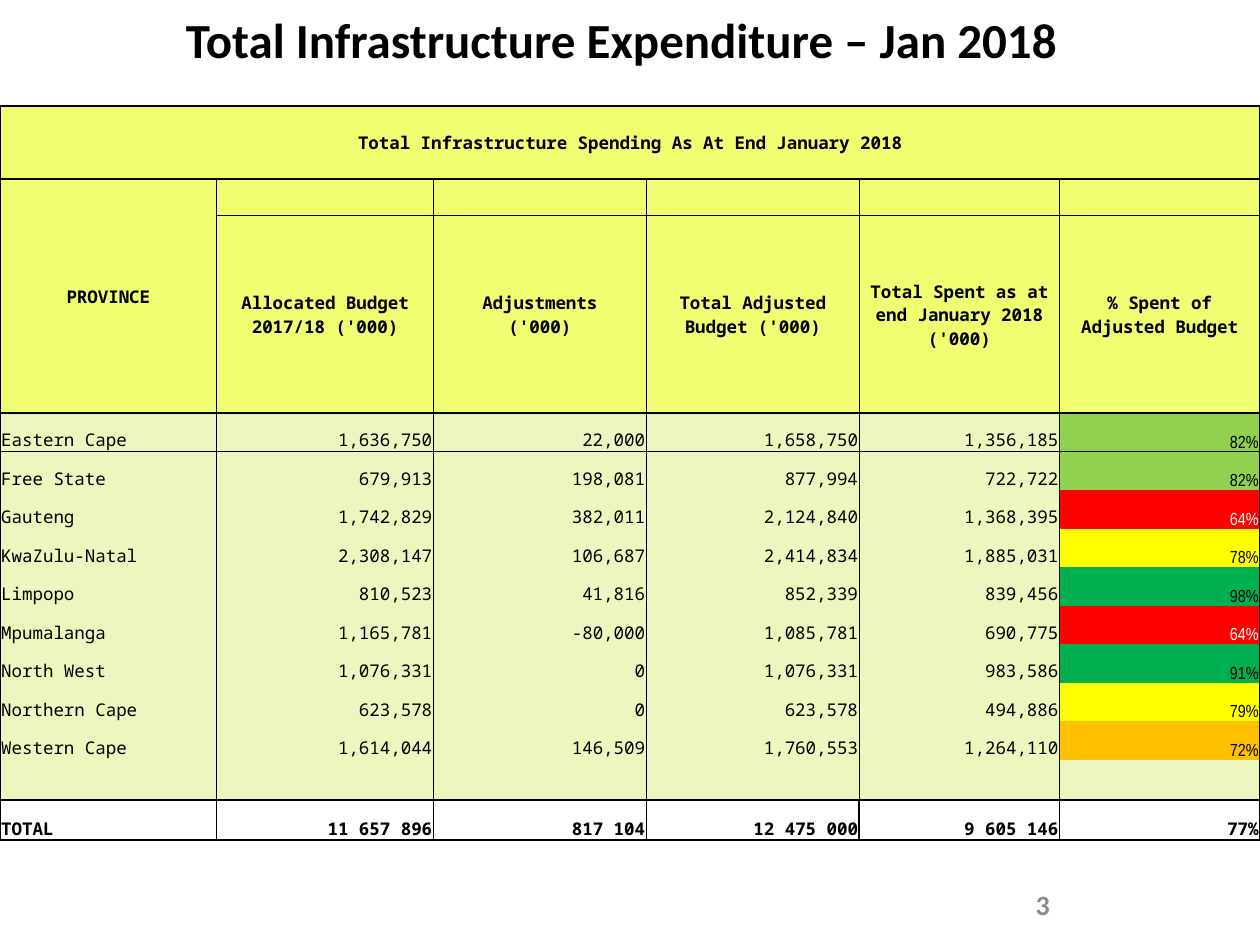
from lxml import etree
from pptx import Presentation
from pptx.dml.color import RGBColor
from pptx.enum.text import MSO_ANCHOR as Anchor, PP_ALIGN as Align
from pptx.oxml.ns import qn
from pptx.util import Inches, Pt

COLORS = {
    "black": "000000", "white": "FFFFFF", "grey": "8C8C8C",
    "header": "F1FE72", "body": "EEF6C0", "light green": "92D050",
    "green": "00B050", "yellow": "FFFF00", "orange": "FFC000", "red": "FF0000",
}
MONO = "Noto Sans Mono"

HEADINGS = [
    "PROVINCE", "Allocated Budget 2017/18 ('000)", "Adjustments\v('000)",
    "Total Adjusted Budget ('000)",
    "Total Spent as at end January 2018 ('000)", "% Spent of Adjusted Budget",
]
PROVINCES = [
    ("Eastern Cape", "1,636,750", "22,000", "1,658,750", "1,356,185", "82%"),
    ("Free State", "679,913", "198,081", "877,994", "722,722", "82%"),
    ("Gauteng", "1,742,829", "382,011", "2,124,840", "1,368,395", "64%"),
    ("KwaZulu-Natal", "2,308,147", "106,687", "2,414,834", "1,885,031", "78%"),
    ("Limpopo", "810,523", "41,816", "852,339", "839,456", "98%"),
    ("Mpumalanga", "1,165,781", "-80,000", "1,085,781", "690,775", "64%"),
    ("North West", "1,076,331", "0", "1,076,331", "983,586", "91%"),
    ("Northern Cape", "623,578", "0", "623,578", "494,886", "79%"),
    ("Western Cape", "1,614,044", "146,509", "1,760,553", "1,264,110", "72%"),
]
TOTAL = ("TOTAL", "11 657 896", "817 104", "12 475 000", "9 605 146", "77%")
# Lowest percentage for each rating colour
RATINGS = [(90, "green"), (80, "light green"), (75, "yellow"),
           (70, "orange"), (0, "red")]


def style(paragraph, size, font_name, color, bold, align):
    paragraph.alignment = align
    font = paragraph.font
    font.size, font.name, font.bold = Pt(size), font_name, bold
    font.color.rgb = RGBColor.from_string(COLORS[color])


def add_border(cell, side, width):
    line = etree.SubElement(cell._tc.get_or_add_tcPr(), qn(f"a:ln{side}"),
                            w=str(Pt(width)))
    fill = etree.SubElement(line, qn("a:solidFill"))
    etree.SubElement(fill, qn("a:srgbClr"), val=COLORS["black"])


prs = Presentation()
prs.slide_width, prs.slide_height = Inches(10), Inches(7.5)
slide = prs.slides.add_slide(prs.slide_layouts[6])

# Title and page number
for text, box, size, color, align in [
    ("Total Infrastructure Expenditure – Jan 2018", (0.43, 0.04, 9, 0.54),
     28, "black", Align.CENTER),
    ("3", (6.1, 6.98, 2.33, 0.4), 16, "grey", Align.RIGHT),
]:
    frame = slide.shapes.add_textbox(*map(Inches, box)).text_frame
    frame.word_wrap = True
    frame.vertical_anchor = Anchor.MIDDLE
    frame.text = text
    style(frame.paragraphs[0], size, "Calibri", color, True, align)

# Spending table
rows = [["Total Infrastructure Spending As At End January 2018"] + [""] * 5,
        HEADINGS[:1] + [""] * 5, [""] + HEADINGS[1:],
        *PROVINCES, [""] * 6, TOTAL]
widths = [1.72, 1.72, 1.69, 1.69, 1.59, 1.59]
header_heights, footer_heights = [0.58, 0.29, 1.57], [0.32, 0.32]
table_height = 5.83
province_height = (table_height - sum(header_heights + footer_heights)) / len(PROVINCES)
heights = header_heights + [province_height] * len(PROVINCES) + footer_heights

spending = slide.shapes.add_table(
    len(rows), len(widths), Inches(0), Inches(0.84), Inches(10),
    Inches(table_height)).table
spending.first_row = spending.horz_banding = False
# Table style without grid lines
spending._tbl.tblPr.find(qn("a:tableStyleId")).text = \
    "{2D5ABB26-0587-4C30-8999-92F81FD0307C}"
for column, width in zip(spending.columns, widths):
    column.width = Inches(width)
for row, height in zip(spending.rows, heights):
    row.height = Inches(height)

first_province = len(header_heights)
total_row = len(rows) - 1
percent_col = len(widths) - 1
# Line widths of the ruled row edges; the other row edges have no line
row_edges = {0: 1, 1: 1, 2: 0.5, first_province: 1, total_row: 1, total_row + 1: 1}

for r, values in enumerate(rows):
    is_header, is_total = r < first_province, r == total_row
    for c, value in enumerate(values):
        cell = spending.cell(r, c)
        cell.margin_left = cell.margin_right = cell.margin_top = Inches(0.01)
        cell.margin_bottom = 0
        cell.vertical_anchor = Anchor.MIDDLE if is_header else Anchor.BOTTOM

        # Borders
        for side, edge in (("L", c), ("R", c + 1)):
            outer = edge in (0, len(widths))
            add_border(cell, side, 1 if outer or is_total else 0.5)
        for side, edge in (("T", r), ("B", r + 1)):
            if edge in row_edges:
                add_border(cell, side, row_edges[edge])

        # Fill and text
        fill = "header" if is_header else "white" if is_total else "body"
        font_name, color = MONO, "black"
        if c == percent_col and value and not is_header and not is_total:
            percent = int(value.rstrip("%"))
            fill = next(name for lowest, name in RATINGS if percent >= lowest)
            font_name = "Arial Narrow"
            color = "white" if fill == "red" else "black"
        cell.fill.solid()
        cell.fill.fore_color.rgb = RGBColor.from_string(COLORS[fill])
        align = Align.CENTER if is_header else Align.RIGHT if c else Align.LEFT
        cell.text = value
        paragraph = cell.text_frame.paragraphs[0]
        style(paragraph, 10, font_name, color, is_header or is_total, align)
        if not value:
            etree.SubElement(paragraph._p, qn("a:endParaRPr"), sz="1000")

spending.cell(0, 0).merge(spending.cell(0, percent_col))
spending.cell(1, 0).merge(spending.cell(2, 0))

prs.save("out.pptx")
